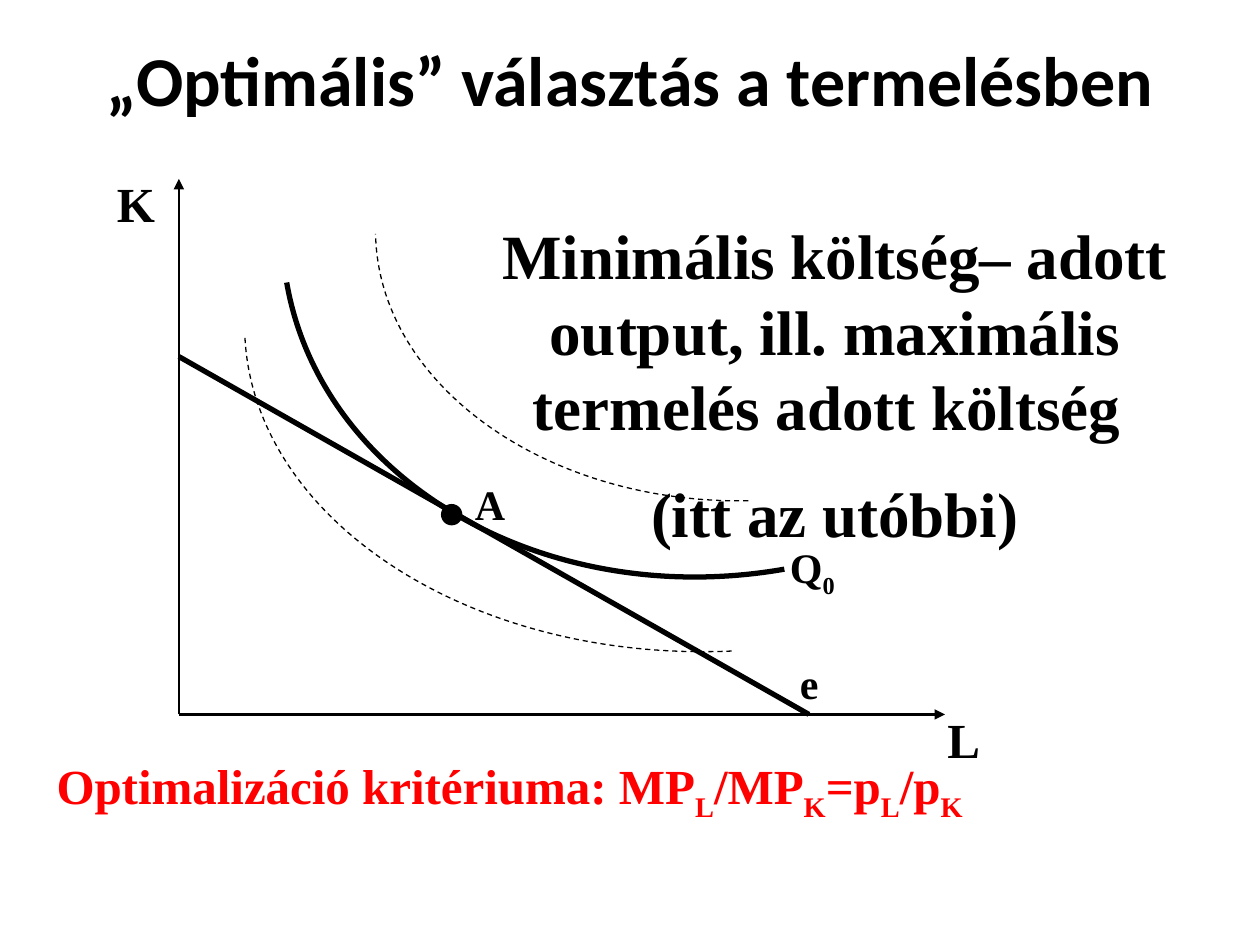
import typing

import pptx
import pptx.dml.color
import pptx.enum.dml
import pptx.enum.shapes
import pptx.enum.text
import pptx.util
from lxml import etree
from pptx.oxml.ns import qn

Inches = pptx.util.Inches
Pt = pptx.util.Pt
Align = pptx.enum.text.PP_ALIGN
Anchor = pptx.enum.text.MSO_ANCHOR
Fit = pptx.enum.text.MSO_AUTO_SIZE
Dash = pptx.enum.dml.MSO_LINE
Point = tuple[float, float]
Box = tuple[float, float, float, float]
SERIF = "Times New Roman"
BLACK = "000000"
RED = "FF0000"
BEND = 0.55  # handle length of a quarter ellipse


class Line(typing.NamedTuple):
    start: Point
    end: Point
    width: float
    arrow: bool = False


class Curve(typing.NamedTuple):
    """A quarter ellipse that fills its box, then turned."""
    box: Box
    turn: float
    width: float
    dash: bool = False


class Label(typing.NamedTuple):
    text: str
    box: Box
    size: float
    color: str = BLACK


LINES = [
    Line((1.42, 5.67), (7.5, 5.67), 1.5, True),
    Line((1.42, 5.67), (1.42, 1.42), 1.5, True),
    Line((1.42, 2.83), (6.42, 5.67), 3),
]
CURVES = [
    Curve((2.5, 1.92, 3.5, 2.92), 170.1, 3),
    Curve((2, 2.58, 3.75, 2.67), 177.5, 0.75, True),
    Curve((3, 1.83, 2.92, 2.17), 179, 0.75, True),
]
# An underscore marks the next letter as a subscript.
LABELS = [
    Label("K", (0.83, 1.33, 0.58, 0.57), 28),
    Label("L", (7.42, 5.58, 0.75, 0.57), 28),
    Label("A", (3.67, 3.75, 0.42, 0.5), 24),
    Label("e", (6.25, 5.17, 0.58, 0.5), 24),
    Label("Q_0", (6.17, 4.25, 0.58, 0.51), 24),
    Label("Optimalizáció kritériuma: MP_L/MP_K=p_L/p_K",
          (0.35, 5.95, 7.78, 0.57), 28, RED),
]


def paint(target, color: str) -> None:
    """Give a colour format a hex colour."""
    target.rgb = pptx.dml.color.RGBColor.from_string(color)


def add_run(par, text: str, low: bool = False) -> None:
    run = par.add_run()
    run.text = text
    if low:
        run.font._element.set("baseline", "-25000")


def add_text(slide, text: str, box: Box, *, size: float, font: str = SERIF,
             color: str = BLACK, align=Align.LEFT, anchor=Anchor.TOP,
             fit=Fit.SHAPE_TO_FIT_TEXT) -> None:
    frame = slide.shapes.add_textbox(*map(Inches, box)).text_frame
    frame.word_wrap = True
    frame.auto_size = fit
    frame.vertical_anchor = anchor
    for i, row in enumerate(text.split("\n")):
        par = frame.add_paragraph() if i else frame.paragraphs[0]
        par.alignment = align
        if i:
            par.space_before = Pt(size / 2)
        head, *tail = row.split("_")
        add_run(par, head)
        for part in tail:
            add_run(par, part[0], low=True)
            if part[1:]:
                add_run(par, part[1:])
        for run in par.runs:
            run.font.name = font
            run.font.size = Pt(size)
            run.font.bold = True
            paint(run.font.color, color)


def add_line(slide, item: Line) -> None:
    line = slide.shapes.add_connector(
        pptx.enum.shapes.MSO_CONNECTOR.STRAIGHT,
        *map(Inches, item.start + item.end))
    line.line.width = Pt(item.width)
    paint(line.line.color, BLACK)
    props = line._element.spPr
    if item.arrow:
        etree.SubElement(props.find(qn("a:ln")), qn("a:tailEnd"), type="triangle")
    etree.SubElement(props, qn("a:effectLst"))


def add_curve(slide, item: Curve) -> None:
    left, top, wide, high = item.box
    pen = slide.shapes.build_freeform(Inches(left), Inches(top))
    knots = [(BEND, 0), (1, 1 - BEND), (1, 1)]
    pen.add_line_segments([(Inches(left + x * wide), Inches(top + y * high))
                           for x, y in knots], close=False)
    shape = pen.convert_to_shape()
    # Join the three segments into one cubic curve.
    steps = list(shape._element.iter(qn("a:lnTo")))
    cubic = etree.SubElement(steps[0].getparent(), qn("a:cubicBezTo"))
    for step in steps:
        cubic.append(step[0])
        step.getparent().remove(step)
    shape.rotation = item.turn
    shape.shadow.inherit = False
    shape.fill.background()
    shape.line.width = Pt(item.width)
    paint(shape.line.color, BLACK)
    if item.dash:
        shape.line.dash_style = Dash.DASH


def add_dot(slide, left: float, top: float, size: float) -> None:
    dot = slide.shapes.add_shape(
        pptx.enum.shapes.MSO_SHAPE.OVAL,
        *map(Inches, (left, top, size, size)))
    dot.shadow.inherit = False
    dot.fill.solid()
    paint(dot.fill.fore_color, BLACK)
    dot.line.fill.background()


def main() -> None:
    deck = pptx.Presentation()
    deck.slide_width, deck.slide_height = Inches(10), Inches(7.5)
    slide = deck.slides.add_slide(deck.slide_layouts[6])
    add_text(slide, "„Optimális” választás a termelésben", (0.33, 0, 9.34, 1.25),
             size=40, font="Calibri", align=Align.CENTER, anchor=Anchor.MIDDLE,
             fit=Fit.NONE)
    for line in LINES:
        add_line(slide, line)
    for curve in CURVES:
        add_curve(slide, curve)
    add_dot(slide, 3.5, 4, 0.17)
    for label in LABELS:
        add_text(slide, label.text, label.box, size=label.size, color=label.color)
    add_text(slide, "Minimális költség– adott output, ill. maximális termelés "
             "adott költség \n(itt az utóbbi)", (3.75, 1.67, 5.75, 2.83),
             size=36, align=Align.CENTER)
    deck.save("out.pptx")


if __name__ == "__main__":
    main()
